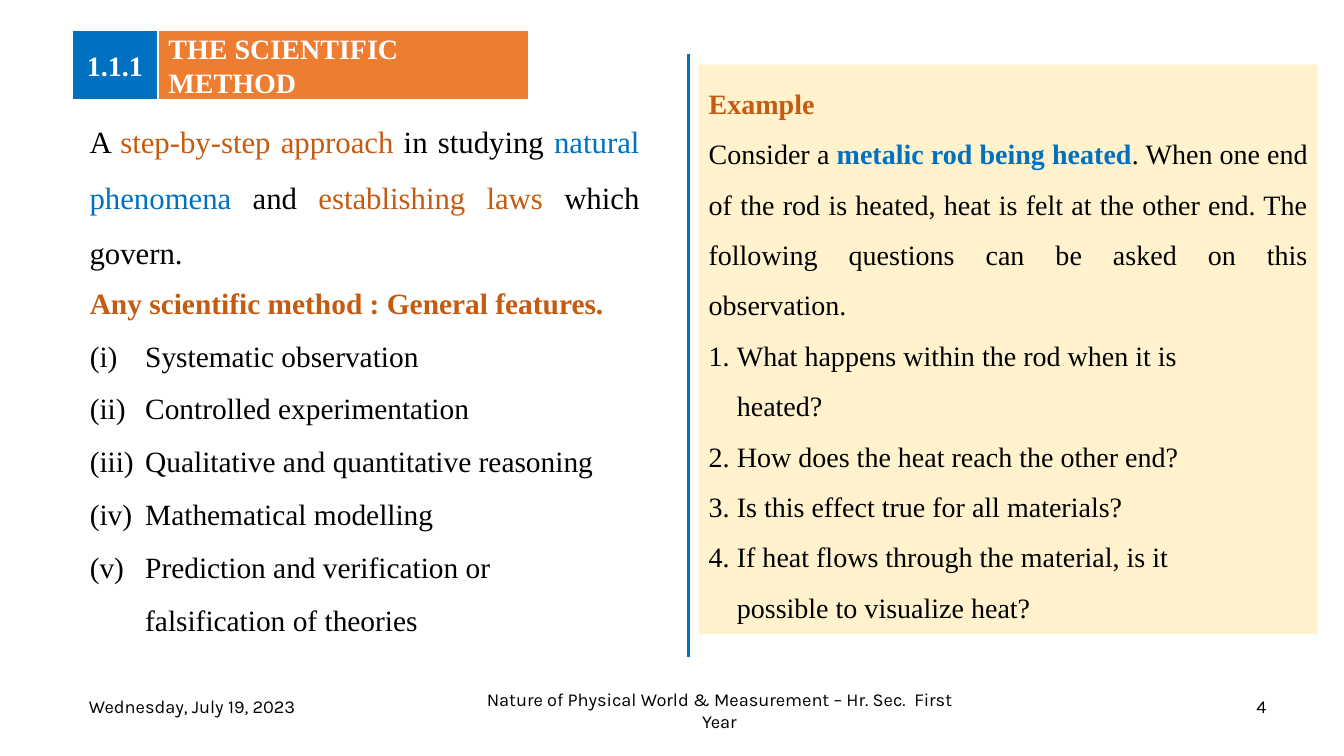
from dataclasses import dataclass

from lxml import etree
from pptx import Presentation
from pptx.dml.color import RGBColor
from pptx.enum.shapes import MSO_CONNECTOR, MSO_SHAPE
from pptx.enum.text import MSO_ANCHOR, MSO_AUTO_SIZE, PP_ALIGN
from pptx.oxml.ns import qn
from pptx.util import Inches, Pt

LEFT, CENTER, JUSTIFY = PP_ALIGN.LEFT, PP_ALIGN.CENTER, PP_ALIGN.JUSTIFY
TOP, MIDDLE = MSO_ANCHOR.TOP, MSO_ANCHOR.MIDDLE
NO_FIT = MSO_AUTO_SIZE.NONE
RECT, STRAIGHT = MSO_SHAPE.RECTANGLE, MSO_CONNECTOR.STRAIGHT


@dataclass
class Theme:
    black: RGBColor = RGBColor(0, 0, 0)
    white: RGBColor = RGBColor(255, 255, 255)
    blue: RGBColor = RGBColor(0x00, 0x70, 0xC0)
    orange: RGBColor = RGBColor(0xED, 0x7D, 0x31)
    rust: RGBColor = RGBColor(0xC5, 0x5A, 0x11)
    cream: RGBColor = RGBColor(0xFF, 0xF2, 0xCC)
    serif: str = "Times New Roman"
    sans: str = "Karla"
    foot: int = 13
    head: int = 20
    list: int = 21
    lead: int = 22


theme = Theme()


def place(shape, left, top, width, height, anchor):
    shape.left, shape.top = Inches(left), Inches(top)
    shape.width, shape.height = Inches(width), Inches(height)
    frame = shape.text_frame
    frame.word_wrap = True
    frame.auto_size = NO_FIT
    frame.vertical_anchor = anchor
    return frame


def write(frame, paras, size, font=theme.serif, space=1.0):
    """Each paragraph is (alignment, hanging indent, runs of text, colour, bold)."""
    for i, (align, hang, runs) in enumerate(paras):
        para = frame.add_paragraph() if i else frame.paragraphs[0]
        para.alignment = align
        para.line_spacing = space
        para.space_before = para.space_after = Pt(0)
        props = para._p.get_or_add_pPr()
        props.set("marL", str(Inches(hang)))
        props.set("indent", str(-Inches(hang)))
        etree.SubElement(props, qn("a:buNone"))
        for text, color, bold in runs:
            for j, part in enumerate(text.split("\n")):
                if j:
                    para.add_line_break()
                run = para.add_run()
                run.text = part
                run.font.name, run.font.size = font, Pt(size)
                run.font.bold, run.font.color.rgb = bold, color


prs = Presentation()
prs.slide_width, prs.slide_height = Inches(13.33), Inches(7.5)
slide = prs.slides.add_slide(prs.slide_layouts[1])
shapes = slide.shapes

# Heading: number and title
badge = shapes.add_shape(RECT, 0, 0, 0, 0)
badge.shadow.inherit = False
title = shapes.title
heads = [
    (badge, 0.71, 0.86, theme.blue, CENTER, "1.1.1"),
    (title, 1.57, 3.68, theme.orange, LEFT, "THE SCIENTIFIC METHOD"),
]
for box, left, width, fill, align, text in heads:
    frame = place(box, left, 0.3, width, 0.69, MIDDLE)
    box.fill.solid()
    box.fill.fore_color.rgb = fill
    box.line.color.rgb = theme.white
    box.line.width = Pt(1.5)
    write(frame, [(align, 0, [(text, theme.white, True)])], theme.head)

# Definition
lead = place(shapes.add_textbox(0, 0, 0, 0), 0.79, 0.99, 5.65, 1.7, TOP)
write(lead, [(JUSTIFY, 0, [
    ("A ", theme.black, False),
    ("step-by-step approach", theme.rust, False),
    (" in studying ", theme.black, False),
    ("natural phenomena ", theme.blue, False),
    ("and ", theme.black, False),
    ("establishing laws ", theme.rust, False),
    ("which govern.", theme.black, False),
])], theme.lead, space=1.5)

# General features
traits = [
    "(i)\tSystematic observation",
    "(ii)\tControlled experimentation",
    "(iii)\tQualitative and quantitative reasoning",
    "(iv)\tMathematical modelling",
    "(v)\tPrediction and verification or\nfalsification of theories",
]
paras = [(LEFT, 0, [("Any scientific method : General features.", theme.rust, True)])]
paras += [(LEFT, 0.55, [(text, theme.black, False)]) for text in traits]
body = place(slide.placeholders[1], 0.79, 2.6, 5.65, 4.34, TOP)
write(body, paras, theme.list, space=1.5)

# Divider
rule = shapes.add_connector(
    STRAIGHT, Inches(6.83), Inches(0.54), Inches(6.83), Inches(6.52))
rule.line.color.rgb = theme.blue
rule.line.width = Pt(2.25)
etree.SubElement(rule._element.spPr, qn("a:effectLst"))

# Example panel
panel = shapes.add_shape(RECT, 0, 0, 0, 0)
panel.shadow.inherit = False
panel.fill.solid()
panel.fill.fore_color.rgb = theme.cream
panel.line.fill.background()
asks = [
    "1.\tWhat happens within the rod when it is\nheated?",
    "2.\tHow does the heat reach the other end?",
    "3.\tIs this effect true for all materials?",
    "4.\tIf heat flows through the material, is it\npossible to visualize heat?",
]
paras = [
    (LEFT, 0, [("Example", theme.rust, True)]),
    (JUSTIFY, 0, [
        ("Consider a ", theme.black, False),
        ("metalic rod being heated", theme.blue, True),
        (". When one end of the rod is heated, heat is felt at the other end. "
         "The following questions can be asked on this observation.",
         theme.black, False),
    ]),
]
paras += [(LEFT, 0.28, [(text, theme.black, False)]) for text in asks]
frame = place(panel, 6.93, 0.64, 6.14, 5.65, TOP)
write(frame, paras, theme.head, space=1.5)

# Footer
notes = [
    (0.71, 6.81, 2.39, "Wednesday, July 19, 2023"),
    (4.55, 6.85, 5.17, "Nature of Physical World & Measurement – Hr. Sec.  First Year"),
    (12.3, 6.81, 0.42, "4"),
]
for left, top, width, text in notes:
    frame = place(shapes.add_textbox(0, 0, 0, 0), left, top, width, 0.4, MIDDLE)
    write(frame, [(CENTER, 0, [(text, theme.black, False)])], theme.foot, theme.sans)

prs.save("out.pptx")
